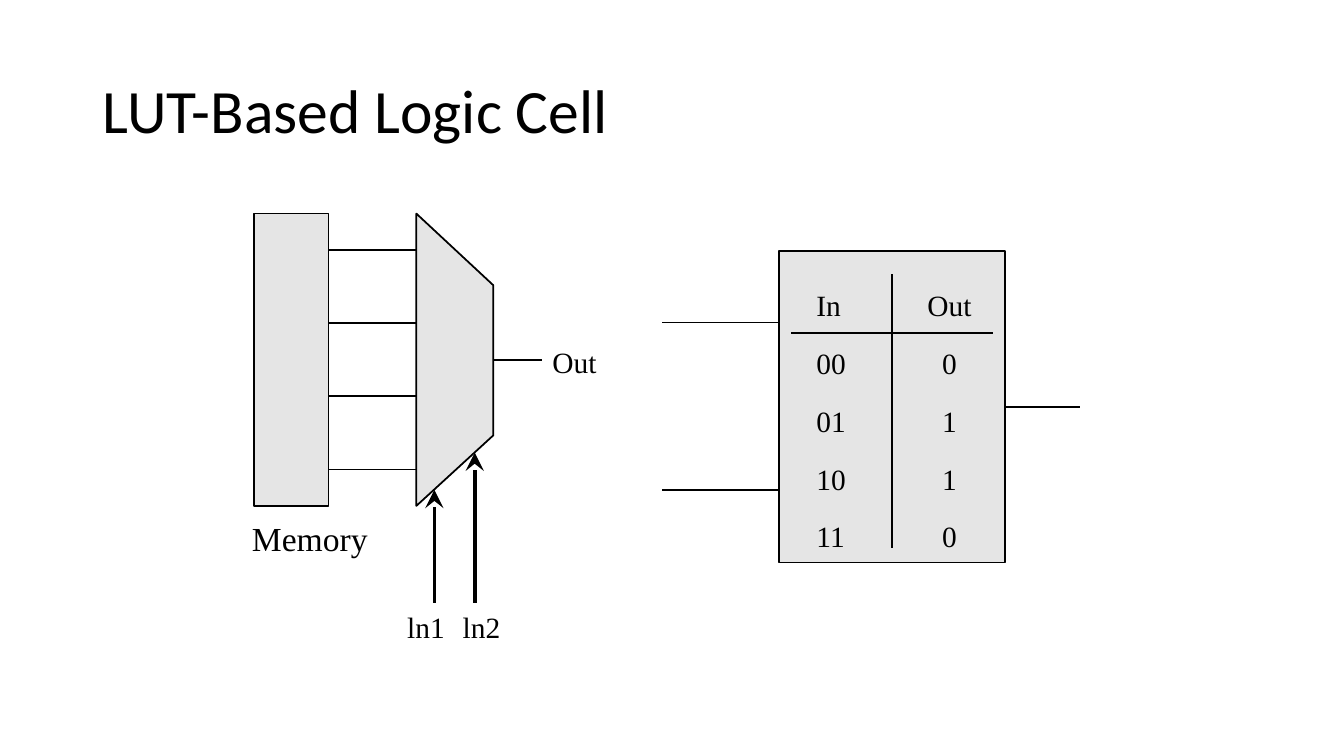
from dataclasses import dataclass

from lxml import etree
from pptx import Presentation
from pptx.dml.color import RGBColor
from pptx.enum import shapes, text
from pptx.oxml import ns
from pptx.util import Pt


@dataclass(frozen=True)
class Theme:
    ink: RGBColor = RGBColor(0x00, 0x00, 0x00)
    block: RGBColor = RGBColor(0xE5, 0xE5, 0xE5)
    title_font: str = "Calibri"
    label_font: str = "Times New Roman"
    title_size: float = 44
    caption_size: float = 24
    label_size: float = 21
    wire: float = 1.25
    select_wire: float = 2.63


THEME = Theme()
PLAIN_TABLE_STYLE = "{2D5ABB26-0587-4C30-8999-92F81FD0307C}"
TRUTH_ROWS = [("In", "Out"), ("00", "0"), ("01", "1"), ("10", "1"), ("11", "0")]


def format_runs(paragraph, font_name, size):
    for run in paragraph.runs:
        run.font.name = font_name
        run.font.size = Pt(size)
        run.font.color.rgb = THEME.ink


def set_title(slide, wording):
    title = slide.shapes.title
    title.left, title.top, title.width, title.height = Pt(66), Pt(28.8), Pt(828), Pt(104.4)
    title.text_frame.text = wording
    title.text_frame.vertical_anchor = text.MSO_ANCHOR.MIDDLE
    heading = title.text_frame.paragraphs[0]
    heading.alignment = text.PP_ALIGN.LEFT
    heading.line_spacing = 0.9
    format_runs(heading, THEME.title_font, THEME.title_size)


def style_block(block):
    block.shadow.inherit = False
    block.fill.solid()
    block.fill.fore_color.rgb = THEME.block
    block.line.color.rgb = THEME.ink
    block.line.width = Pt(THEME.wire)
    return block


def add_block(slide, left, top, width, height):
    return style_block(slide.shapes.add_shape(
        shapes.MSO_SHAPE.RECTANGLE, Pt(left), Pt(top), Pt(width), Pt(height)))


def add_outline(slide, corners):
    start, *others = [(Pt(x), Pt(y)) for x, y in corners]
    builder = slide.shapes.build_freeform(*start, scale=1.0)
    builder.add_line_segments(others, close=True)
    return style_block(builder.convert_to_shape())


def add_wire(slide, x1, y1, x2, y2, width=THEME.wire):
    wire = slide.shapes.add_connector(
        shapes.MSO_CONNECTOR.STRAIGHT, Pt(x1), Pt(y1), Pt(x2), Pt(y2))
    wire.line.color.rgb = THEME.ink
    wire.line.width = Pt(width)
    etree.SubElement(wire._element.spPr, ns.qn("a:effectLst"))
    return wire


def add_select_arrow(slide, x, bottom, tip):
    arrow = add_wire(slide, x, bottom, x, tip, THEME.select_wire)
    etree.SubElement(arrow.line._get_or_add_ln(), ns.qn("a:tailEnd"),
                     type="stealth", w="lg", len="lg")


def add_label(slide, wording, left, top, width, size=THEME.label_size):
    label = slide.shapes.add_textbox(Pt(left), Pt(top), Pt(width), Pt(size * 1.2))
    frame = label.text_frame
    frame.margin_left = frame.margin_right = frame.margin_top = frame.margin_bottom = 0
    frame.word_wrap = False
    frame.auto_size = text.MSO_AUTO_SIZE.SHAPE_TO_FIT_TEXT
    frame.text = wording
    format_runs(frame.paragraphs[0], THEME.label_font, size)


def add_truth_table(slide, left, top, column_width, row_height):
    table = slide.shapes.add_table(
        len(TRUTH_ROWS), 2, Pt(left), Pt(top),
        Pt(2 * column_width), Pt(len(TRUTH_ROWS) * row_height)).table
    table.first_row = table.horz_banding = False
    table._tbl.tblPr.find(ns.qn("a:tableStyleId")).text = PLAIN_TABLE_STYLE
    columns = [(18, text.PP_ALIGN.LEFT), (10, text.PP_ALIGN.CENTER)]
    for row, values in enumerate(TRUTH_ROWS):
        table.rows[row].height = Pt(row_height)
        for column, (indent, alignment) in enumerate(columns):
            cell = table.cell(row, column)
            cell.fill.background()
            cell.margin_left = Pt(indent)
            cell.margin_right = cell.margin_top = cell.margin_bottom = 0
            cell.vertical_anchor = text.MSO_ANCHOR.BOTTOM
            cell.text_frame.text = values[column]
            paragraph = cell.text_frame.paragraphs[0]
            paragraph.alignment = alignment
            format_runs(paragraph, THEME.label_font, THEME.label_size)


def draw_multiplexer(slide):
    top, height = 152.6, 208.8
    memory_left, memory_width = 181.4, 53.3
    mux_left, mux_right = 297.4, 352.4
    add_block(slide, memory_left, top, memory_width, height)
    add_outline(slide, [(mux_left, top), (mux_right, 203.8),
                        (mux_right, 311), (mux_left, top + height)])
    for cell in range(4):
        y = top + height * (2 * cell + 1) / 8
        add_wire(slide, memory_left + memory_width, y, mux_left, y)
    middle = top + height / 2
    add_wire(slide, mux_right, middle, 387.4, middle)
    for x, tip in [(310.3, 349.9), (339.1, 323.3)]:
        add_select_arrow(slide, x, 430.6, tip)
    add_label(slide, "Memory", 180, 370.1, 83.5, THEME.caption_size)
    add_label(slide, "Out", 394.6, 245.5, 31.7)
    add_label(slide, "ln1", 290.9, 434.9, 27.4)
    add_label(slide, "ln2", 330.5, 434.9, 27.4)


def draw_lookup_table(slide):
    left, top, width, height = 556.6, 179.3, 161.3, 222.5
    lookup = add_block(slide, left, top, width, height)
    for y in (230.4, 349.9):
        add_wire(slide, 473, y, left, y)
    middle = top + height / 2
    output = add_wire(slide, left + width, middle, 771.1, middle)
    output.begin_connect(lookup, 3)
    table_left, column_width = 565.2, 72
    divider = table_left + column_width
    add_truth_table(slide, table_left, 189.5, column_width, 41.3)
    add_wire(slide, divider, 195.8, divider, 391.7)
    add_wire(slide, table_left, 237.6, table_left + 2 * column_width, 237.6)


def main():
    deck = Presentation()
    deck.slide_width, deck.slide_height = Pt(960), Pt(540)
    slide = deck.slides.add_slide(deck.slide_layouts[5])
    set_title(slide, "LUT-Based Logic Cell")
    draw_multiplexer(slide)
    draw_lookup_table(slide)
    deck.save("out.pptx")


if __name__ == "__main__":
    main()
